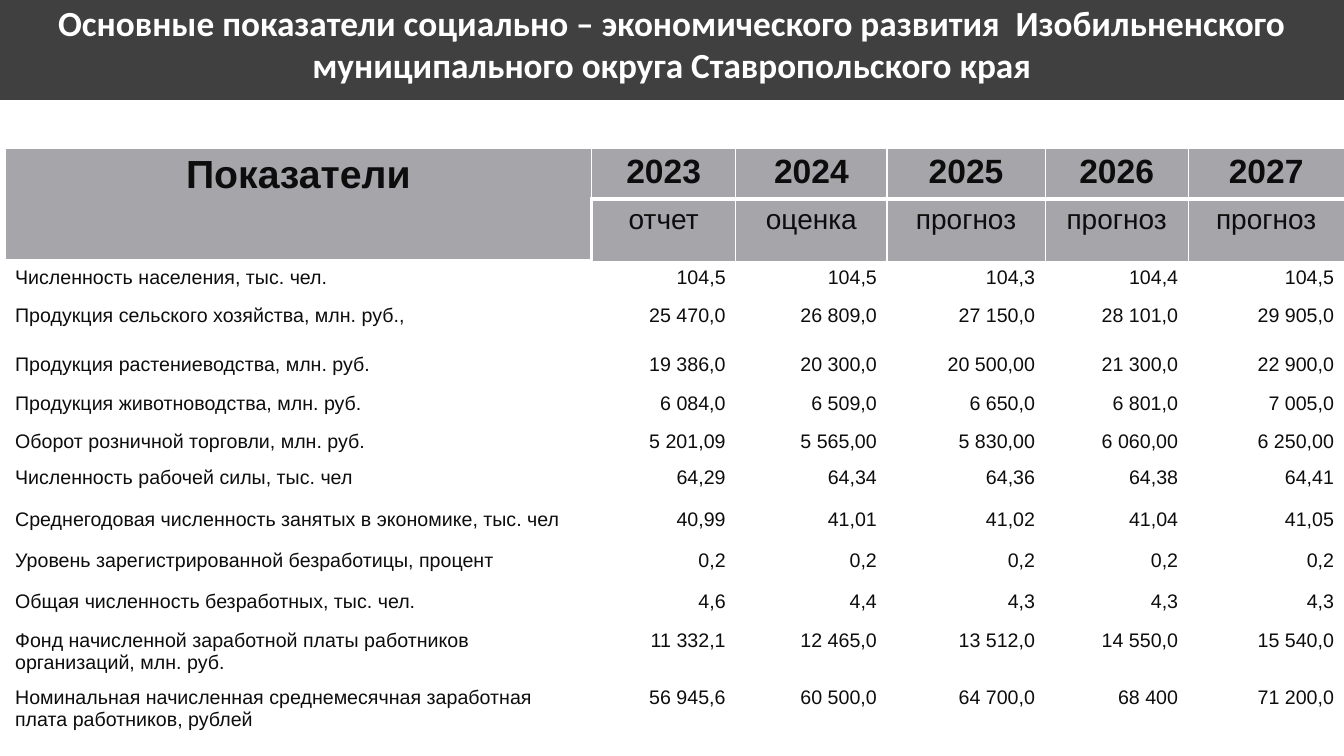
"""Slide with the main socio-economic indicators of a municipal district."""
from dataclasses import dataclass

from lxml import etree
from pptx import Presentation
from pptx import util as u
from pptx.dml.color import RGBColor
from pptx.enum import shapes, text
from pptx.oxml import ns

WHITE = RGBColor(0xFF, 0xFF, 0xFF)
DARK = RGBColor(0x40, 0x40, 0x40)
GREY = RGBColor(0xA5, 0xA5, 0xAA)
INK = RGBColor(0x0D, 0x0D, 0x0D)

TITLE = ("Основные показатели социально – экономического развития  "
         "Изобильненского муниципального округа Ставропольского края")
COL_WIDTHS = (419, 103, 108, 113, 102.2, 111.4)
HEADER_HEIGHTS = (36, 44.6)


@dataclass(frozen=True)
class Style:
    size: float
    color: RGBColor
    font: str = "Arial"
    bold: bool = False
    align: text.PP_ALIGN = text.PP_ALIGN.CENTER


@dataclass(frozen=True)
class Year:
    name: str
    status: str


@dataclass(frozen=True)
class Indicator:
    name: str
    values: tuple[str, ...]
    height: float = 27.4


HEADING = Style(25.2, WHITE, "Calibri", True)
CORNER = Style(28, INK, bold=True)
YEAR = Style(24, INK, bold=True)
STATUS = Style(20, INK)
LABEL = Style(14, INK, align=text.PP_ALIGN.LEFT)
VALUE = Style(14, INK, align=text.PP_ALIGN.RIGHT)

YEARS = (
    Year("2023", "отчет"),
    Year("2024", "оценка"),
    Year("2025", "прогноз"),
    Year("2026", "прогноз"),
    Year("2027", "прогноз"),
)
INDICATORS = (
    Indicator("Численность населения, тыс. чел.",
              ("104,5", "104,5", "104,3", "104,4", "104,5")),
    Indicator("Продукция сельского хозяйства, млн. руб.,",
              ("25 470,0", "26 809,0", "27 150,0", "28 101,0", "29 905,0"), 35.3),
    Indicator("Продукция растениеводства, млн. руб.",
              ("19 386,0", "20 300,0", "20 500,00", "21 300,0", "22 900,0")),
    Indicator("Продукция животноводства, млн. руб.",
              ("6 084,0", "6 509,0", "6 650,0", "6 801,0", "7 005,0")),
    Indicator("Оборот розничной торговли, млн. руб.",
              ("5 201,09", "5 565,00", "5 830,00", "6 060,00", "6 250,00"), 26),
    Indicator("Численность рабочей силы, тыс. чел",
              ("64,29", "64,34", "64,36", "64,38", "64,41"), 29.5),
    Indicator("Среднегодовая численность занятых в экономике, тыс. чел",
              ("40,99", "41,01", "41,02", "41,04", "41,05"), 29.5),
    Indicator("Уровень зарегистрированной безработицы, процент",
              ("0,2", "0,2", "0,2", "0,2", "0,2"), 29.5),
    Indicator("Общая численность безработных, тыс. чел.",
              ("4,6", "4,4", "4,3", "4,3", "4,3")),
    Indicator("Фонд начисленной заработной платы работников организаций, млн. руб.",
              ("11 332,1", "12 465,0", "13 512,0", "14 550,0", "15 540,0"), 41),
    Indicator("Номинальная начисленная среднемесячная заработная плата работников, рублей",
              ("56 945,6", "60 500,0", "64 700,0", "68 400", "71 200,0"), 41),
)


def write(tf, content: str, style: Style) -> None:
    tf.text = content
    p = tf.paragraphs[0]
    p.alignment = style.align
    for r in p.runs:
        r.font.name = style.font
        r.font.size = u.Pt(style.size)
        r.font.bold = style.bold
        r.font.color.rgb = style.color


def add_borders(cell, **widths: float) -> None:
    tc_pr = cell._tc.get_or_add_tcPr()
    for side in "LRTB":
        ln = etree.SubElement(tc_pr, ns.qn(f"a:ln{side}"), w=str(u.Pt(widths.get(side, 1))))
        fill = etree.SubElement(ln, ns.qn("a:solidFill"))
        etree.SubElement(fill, ns.qn("a:srgbClr"), val=str(WHITE))


def fill_cell(cell, content: str, style: Style, fill: RGBColor, **widths: float) -> None:
    write(cell.text_frame, content, style)
    add_borders(cell, **widths)
    cell.fill.solid()
    cell.fill.fore_color.rgb = fill


def add_title(s, width: int) -> None:
    sp = s.shapes.add_shape(shapes.MSO_SHAPE.RECTANGLE, 0, 0, width, u.Pt(71.3))
    sp.shadow.inherit = False
    sp.fill.solid()
    sp.fill.fore_color.rgb = DARK
    sp.line.fill.background()
    tf = sp.text_frame
    tf.word_wrap = True
    tf.vertical_anchor = text.MSO_ANCHOR.MIDDLE
    tf.margin_top, tf.margin_bottom = 0, u.Pt(9)
    write(tf, TITLE, HEADING)


def add_indicators(s) -> None:
    heights = HEADER_HEIGHTS + tuple(i.height for i in INDICATORS)
    table = s.shapes.add_table(
        len(heights), len(COL_WIDTHS), u.Pt(3.6), u.Pt(106),
        u.Pt(sum(COL_WIDTHS)), u.Pt(sum(heights))).table
    table.first_row = table.horz_banding = False
    for column, width in zip(table.columns, COL_WIDTHS):
        column.width = u.Pt(width)
    for row, height in zip(table.rows, heights):
        row.height = u.Pt(height)

    table.cell(0, 0).merge(table.cell(1, 0))
    fill_cell(table.cell(0, 0), "Показатели", CORNER, GREY, B=3)
    for col, year in enumerate(YEARS, 1):
        fill_cell(table.cell(0, col), year.name, YEAR, GREY, B=3)
        fill_cell(table.cell(1, col), year.status, STATUS, GREY, T=3, L=3 if col == 1 else 1)
    for row, indicator in enumerate(INDICATORS, len(HEADER_HEIGHTS)):
        top = 3 if row == len(HEADER_HEIGHTS) else 1
        fill_cell(table.cell(row, 0), indicator.name, LABEL, WHITE, T=top)
        for col, value in enumerate(indicator.values, 1):
            fill_cell(table.cell(row, col), value, VALUE, WHITE)


def main() -> None:
    prs = Presentation()
    prs.slide_width, prs.slide_height = u.Pt(960), u.Pt(540)
    s = prs.slides.add_slide(prs.slide_layouts[6])
    add_title(s, prs.slide_width)
    add_indicators(s)
    prs.save("out.pptx")


if __name__ == "__main__":
    main()
